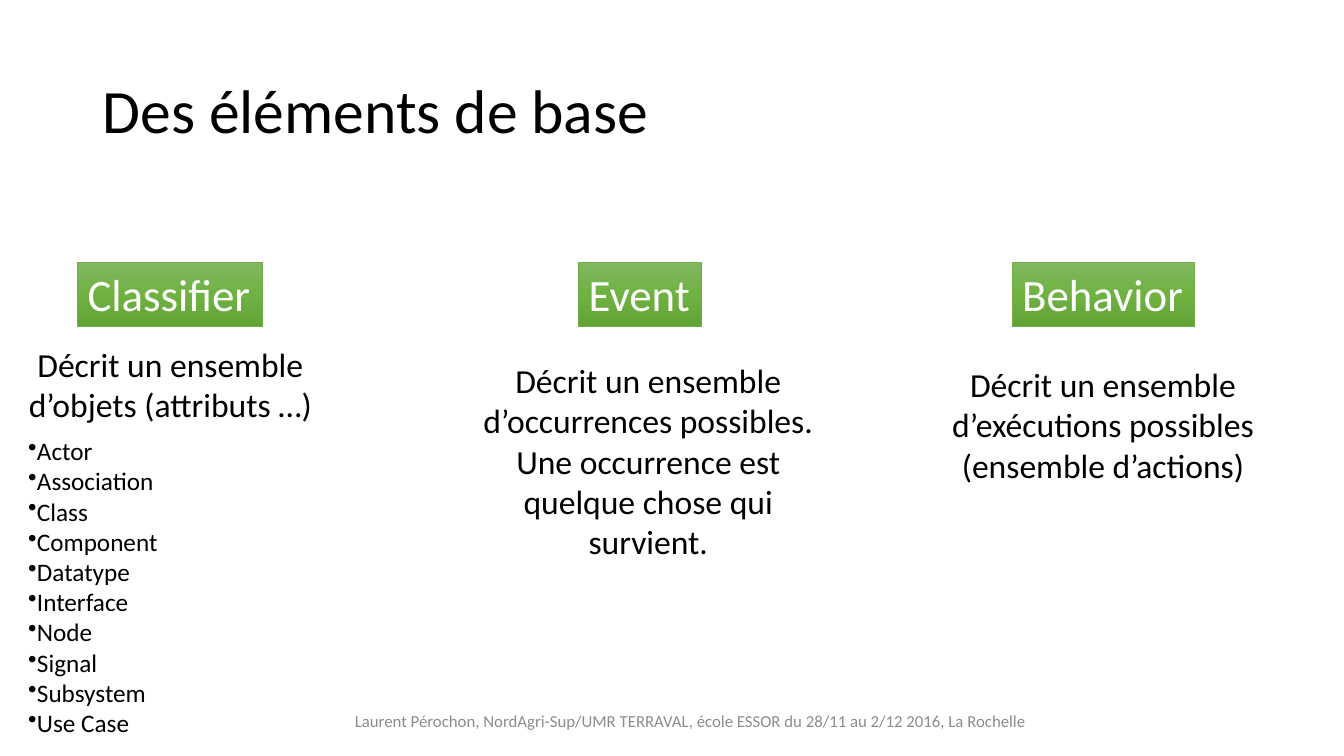
from copy import deepcopy
from dataclasses import dataclass

from lxml import etree
from pptx import Presentation
from pptx.dml.color import RGBColor
from pptx.enum import shapes, text
from pptx.oxml.ns import qn
from pptx.util import Inches, Pt


@dataclass(frozen=True)
class Theme:
    """Colours, font and type sizes of the slide."""
    font: str = "Calibri"
    ink: str = "000000"
    white: str = "FFFFFF"
    muted: str = "8C8C8C"
    border: str = "70AD47"
    gradient: tuple[str, ...] = ("81B861", "6FB242", "62A336")
    title: int = 44
    heading: int = 32
    body: int = 24
    item: int = 18
    footer: int = 12


@dataclass(frozen=True)
class Box:
    """A rectangle in inches."""
    left: float
    top: float
    width: float
    height: float

    def emu(self) -> tuple:
        """Return the rectangle as lengths."""
        return tuple(map(Inches, (self.left, self.top, self.width, self.height)))


@dataclass(frozen=True)
class Concept:
    """A headed column with its definition."""
    name: str
    heading: Box
    definition: str
    body: Box


THEME = Theme()
HEADING_TOP, HEADING_HEIGHT = 2.6, 0.64
CONCEPTS = (
    Concept("Classifier", Box(0.77, HEADING_TOP, 1.83, HEADING_HEIGHT),
            "Décrit un ensemble d’objets (attributs …)",
            Box(0.12, 3.36, 3.14, 0.91)),
    Concept("Event", Box(5.74, HEADING_TOP, 1.22, HEADING_HEIGHT),
            "Décrit un ensemble d’occurrences possibles. "
            "Une occurrence est quelque chose qui survient.",
            Box(4.65, 3.52, 3.56, 2.12)),
    Concept("Behavior", Box(10.04, HEADING_TOP, 1.81, HEADING_HEIGHT),
            "Décrit un ensemble d’exécutions possibles (ensemble d’actions)",
            Box(9.27, 3.56, 3.34, 1.31)),
)
CLASSIFIERS = ("Actor", "Association", "Class", "Component", "Datatype",
               "Interface", "Node", "Signal", "Subsystem", "Use Case")
FOOTER = ("Laurent Pérochon, NordAgri-Sup/UMR TERRAVAL, "
          "école ESSOR du 28/11 au 2/12 2016, La Rochelle")


def write(sp, lines: tuple[str, ...], size: int, color: str,
          align=text.PP_ALIGN.LEFT, anchor=text.MSO_ANCHOR.TOP, wrap: bool = True):
    """Fill a shape with one paragraph per line and return its text frame."""
    tf = sp.text_frame
    tf.word_wrap = wrap
    tf.vertical_anchor = anchor
    tf.text = "\n".join(lines)
    for p in tf.paragraphs:
        p.alignment = align
        p.font.name = THEME.font
        p.font.size = Pt(size)
        p.font.color.rgb = RGBColor.from_string(color)
    return tf


def add_text(slide, box: Box, lines: tuple[str, ...], size: int,
             color: str = THEME.ink, **layout):
    """Add a text box and return its text frame."""
    return write(slide.shapes.add_textbox(*box.emu()), lines, size, color, **layout)


def shade(sp, colors: tuple[str, ...]) -> None:
    """Fill a shape with evenly spaced colours from top to bottom."""
    sp.fill.gradient()
    sp.fill.gradient_angle = 270
    stop_list = sp._element.spPr.find(qn("a:gradFill")).find(qn("a:gsLst"))
    template = deepcopy(stop_list[0])
    for stop in list(stop_list):
        stop_list.remove(stop)
    for i, color in enumerate(colors):
        stop = deepcopy(template)
        stop.set("pos", str(100000 * i // (len(colors) - 1)))
        stop_list.append(stop)
        sp.fill.gradient_stops[i].color.rgb = RGBColor.from_string(color)


def add_concept(slide, concept: Concept) -> None:
    """Draw a shaded heading and the definition under it."""
    sp = slide.shapes.add_shape(shapes.MSO_SHAPE.RECTANGLE, *concept.heading.emu())
    sp.shadow.inherit = False
    shade(sp, THEME.gradient)
    sp.line.color.rgb = RGBColor.from_string(THEME.border)
    sp.line.width = Pt(0.5)
    tf = write(sp, (concept.name,), THEME.heading, THEME.white, wrap=False)
    tf.auto_size = text.MSO_AUTO_SIZE.SHAPE_TO_FIT_TEXT
    add_text(slide, concept.body, (concept.definition,), THEME.body,
             align=text.PP_ALIGN.CENTER)


def add_bullets(slide, box: Box, items: tuple[str, ...]) -> None:
    """Add a bulleted list."""
    tf = add_text(slide, box, items, THEME.item)
    for p in tf.paragraphs:
        bullet = etree.Element(qn("a:buChar"), char="•")
        p._p.get_or_add_pPr().insert(0, bullet)


def main() -> None:
    """Build and save the slide."""
    prs = Presentation()
    prs.slide_width, prs.slide_height = Inches(13.33), Inches(7.5)
    slide = prs.slides.add_slide(prs.slide_layouts[6])
    tf = add_text(slide, Box(0.92, 0.4, 11.5, 1.45), ("Des éléments de base",),
                  THEME.title, anchor=text.MSO_ANCHOR.MIDDLE)
    tf.paragraphs[0].line_spacing = 0.9
    for concept in CONCEPTS:
        add_concept(slide, concept)
    add_text(slide, Box(2.3, 6.95, 9.1, 0.4), (FOOTER,), THEME.footer, THEME.muted,
             align=text.PP_ALIGN.CENTER, anchor=text.MSO_ANCHOR.MIDDLE)
    add_bullets(slide, Box(0.18, 4.27, 6.67, 3.13), CLASSIFIERS)
    prs.save("out.pptx")


if __name__ == "__main__":
    main()
